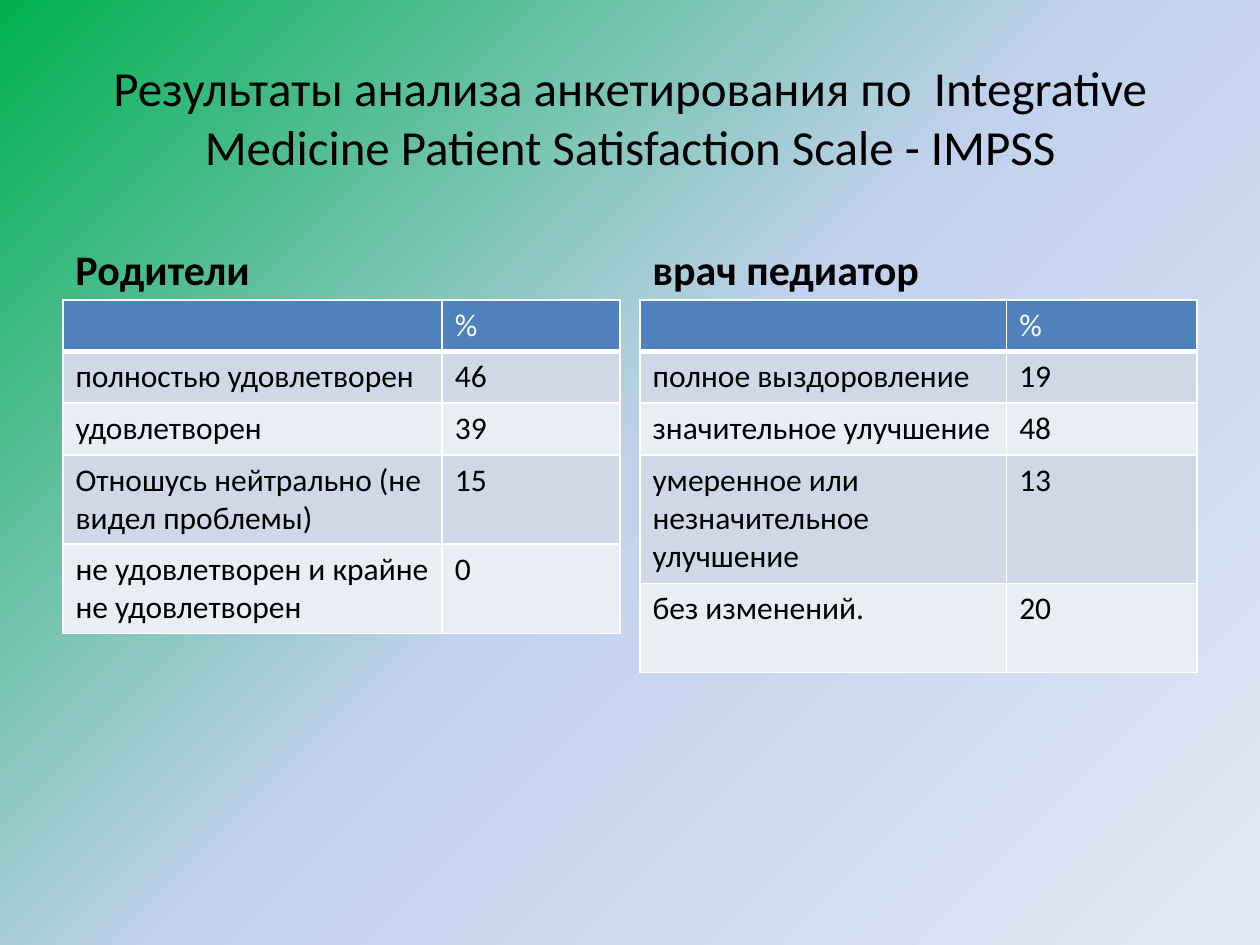
from dataclasses import dataclass

from lxml import etree
from pptx import Presentation, util as u
from pptx.dml.color import RGBColor
from pptx.enum import text
from pptx.oxml import ns


@dataclass(frozen=True)
class Theme:
    font: str = "Calibri"
    title_size: int = 28
    heading_size: int = 24
    cell_size: int = 18
    ink: str = "000000"
    white: str = "FFFFFF"
    header: str = "4F81BD"
    bands: tuple = ("D0D8E8", "E9EDF4")
    background: tuple = ((0, "00B050"), (50, "C2D1ED"), (100, "E1E8F5"))


THEME = Theme()

# Grid, in inches: two equal columns between the margins
WIDTH, HEIGHT = 10, 7.5
MARGIN, GUTTER = 0.5, 0.16
COLUMN = (WIDTH - 2 * MARGIN - GUTTER) / 2
HEADING_TOP, HEADING_HEIGHT = 1.68, 0.7
TABLE_TOP = HEADING_TOP + HEADING_HEIGHT
ROW_HEIGHTS = {1: 0.41, 2: 0.71, 3: 1.02}  # by number of text lines

# Each panel: heading, width of the value column, rows of (answer, %, lines)
PANELS = (
    ("Родители", 1.41, (
        ("полностью удовлетворен", "46", 1),
        ("удовлетворен", "39", 1),
        ("Отношусь нейтрально (не видел проблемы)", "15", 2),
        ("не удовлетворен и крайне не удовлетворен", "0", 2),
    )),
    ("врач педиатор", 1.51, (
        ("полное выздоровление", "19", 1),
        ("значительное улучшение", "48", 1),
        ("умеренное или незначительное улучшение", "13", 3),
        ("без изменений.", "20", 2),
    )),
)


def format_text(text_frame, size, color, bold=False):
    for paragraph in text_frame.paragraphs:
        for run in paragraph.runs:
            run.font.name = THEME.font
            run.font.size = u.Pt(size)
            run.font.bold = bold
            run.font.color.rgb = RGBColor.from_string(color)


def set_background(slide):
    fill = slide.background.fill
    fill.gradient()
    fill.gradient_angle = 315
    stops = slide._element.find(".//" + ns.qn("a:gsLst"))
    for stop in list(stops):
        stops.remove(stop)
    for position, color in THEME.background:
        stop = etree.SubElement(stops, ns.qn("a:gs"), pos=str(position * 1000))
        etree.SubElement(stop, ns.qn("a:srgbClr"), val=color)


def add_text(slide, box, words, size, anchor, alignment, bold=False):
    shape = slide.shapes.add_textbox(*map(u.Inches, box))
    text_frame = shape.text_frame
    text_frame.word_wrap = True
    text_frame.vertical_anchor = anchor
    text_frame.text = words
    text_frame.paragraphs[0].alignment = alignment
    format_text(text_frame, size, THEME.ink, bold)


def set_borders(cell, bottom):
    properties = cell._tc.get_or_add_tcPr()
    for side, points in (("L", 1), ("R", 1), ("T", 1), ("B", bottom)):
        line = etree.SubElement(properties, ns.qn(f"a:ln{side}"), w=str(u.Pt(points)))
        fill = etree.SubElement(line, ns.qn("a:solidFill"))
        etree.SubElement(fill, ns.qn("a:srgbClr"), val=THEME.white)


def fill_cell(cell, words, background, color, bottom=1):
    set_borders(cell, bottom)
    cell.fill.solid()
    cell.fill.fore_color.rgb = RGBColor.from_string(background)
    cell.text_frame.text = words
    format_text(cell.text_frame, THEME.cell_size, color)


def add_table(slide, left, value_width, answers):
    rows = (("", "%", 1),) + answers
    heights = [ROW_HEIGHTS[lines] for *_, lines in rows]
    box = (left, TABLE_TOP, COLUMN, sum(heights))
    table = slide.shapes.add_table(len(rows), 2, *map(u.Inches, box)).table
    table.first_row = table.horz_banding = False
    for column, width in zip(table.columns, (COLUMN - value_width, value_width)):
        column.width = u.Inches(width)
    for index, (*words, _) in enumerate(rows):
        table.rows[index].height = u.Inches(heights[index])
        for cell, value in zip(table.rows[index].cells, words):
            if index == 0:
                fill_cell(cell, value, THEME.header, THEME.white, bottom=3)
            else:
                fill_cell(cell, value, THEME.bands[(index - 1) % 2], THEME.ink)


def main():
    presentation = Presentation()
    presentation.slide_width = u.Inches(WIDTH)
    presentation.slide_height = u.Inches(HEIGHT)
    slide = presentation.slides.add_slide(presentation.slide_layouts[6])
    set_background(slide)

    # Title
    add_text(slide, (MARGIN, 0.3, WIDTH - 2 * MARGIN, 1.25),
             "Результаты анализа анкетирования по  Integrative Medicine "
             "Patient Satisfaction Scale - IMPSS",
             THEME.title_size, text.MSO_ANCHOR.MIDDLE, text.PP_ALIGN.CENTER)

    # Headed tables side by side
    for index, (heading, value_width, answers) in enumerate(PANELS):
        left = MARGIN + index * (COLUMN + GUTTER)
        add_text(slide, (left, HEADING_TOP, COLUMN, HEADING_HEIGHT), heading,
                 THEME.heading_size, text.MSO_ANCHOR.BOTTOM,
                 text.PP_ALIGN.LEFT, bold=True)
        add_table(slide, left, value_width, answers)

    presentation.save("out.pptx")


if __name__ == "__main__":
    main()
